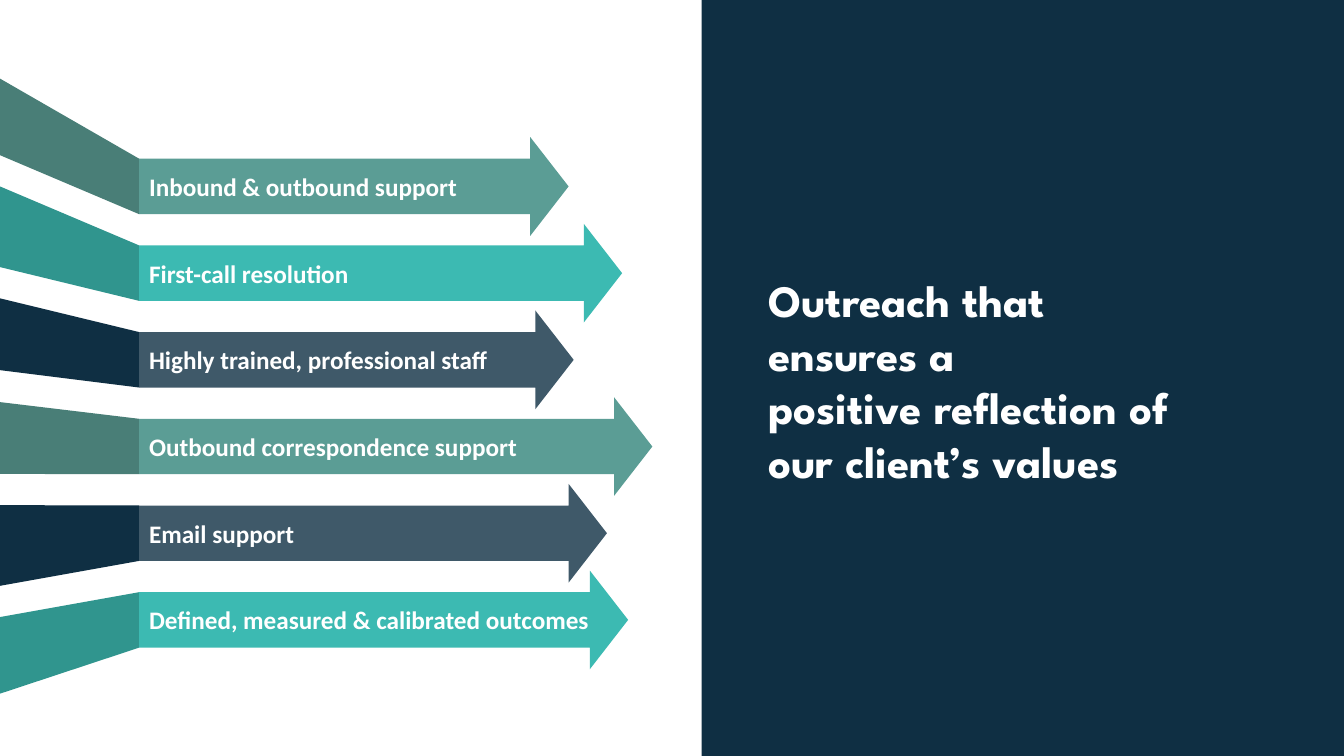
from pptx import Presentation
from pptx.dml.color import RGBColor
from pptx.enum.shapes import MSO_SHAPE as Shape
from pptx.enum.text import MSO_ANCHOR as Anchor, MSO_AUTO_SIZE as AutoSize, PP_ALIGN as Align
from pptx.util import Inches, Pt

NO_BREAK_SPACE = chr(160)
HEADLINE = NO_BREAK_SPACE.join(
    ["Outreach that ensures a positive", "reflection of our client’s values"])

# label, label width, arrow length, ribbon top and bottom at its far end, palette
SERVICES = [
    ("Inbound & outbound support", 3.78, 4.26, 0.40, 1.26, "sage"),
    ("First-call resolution", 4.42, 4.79, 1.57, 2.49, "teal"),
    ("Highly trained, professional staff", 3.87, 4.31, 2.80, 3.59, "navy"),
    ("Outbound correspondence support", 4.70, 5.09, 3.91, 4.70, "sage"),
    ("Email support", 4.10, 4.64, 5.01, 5.93, "navy"),
    ("Defined, measured & calibrated outcomes", 4.70, 4.85, 6.24, 7.10, "teal"),
]

COLORS = {
    "white": "FFFFFF",
    "navy_ribbon": "0F2F43", "navy_arrow": "3F5969",
    "sage_ribbon": "497E77", "sage_arrow": "5B9D95",
    "teal_ribbon": "30958E", "teal_arrow": "3CBAB2",
}

SLIDE_W, SLIDE_H = 13.33, 7.5
PANEL_X = 6.96
RIBBON_X, FOLD_X = -0.66, 1.38
FIRST_Y, ROW_STEP = 1.36, 0.86
ARROW_H, SHAFT_H, HEAD_L = 0.98, 0.55, 0.38
LABEL_H = 0.4


def paint(shape, color):
    shape.shadow.inherit = False
    shape.fill.solid()
    shape.fill.fore_color.rgb = RGBColor.from_string(COLORS[color])
    shape.line.fill.background()


def write(frame, text, font_name, size):
    """Put one left-aligned bold white run into a vertically centred frame."""
    frame.word_wrap = True
    frame.auto_size = AutoSize.NONE
    frame.vertical_anchor = Anchor.MIDDLE
    paragraph = frame.paragraphs[0]
    paragraph.alignment = Align.LEFT
    run = paragraph.add_run()
    run.text = text
    run.font.name = font_name
    run.font.size = Pt(size)
    run.font.bold = True
    run.font.color.rgb = RGBColor.from_string(COLORS["white"])


def add_headline(slide):
    title = slide.shapes.title
    title.left, title.top = Inches(7.52), Inches(2.64)
    title.width, title.height = Inches(4.52), Inches(2.26)
    write(title.text_frame, HEADLINE, "League Spartan", 32)

    panel = slide.shapes.add_shape(
        Shape.RECTANGLE, Inches(PANEL_X), 0, Inches(SLIDE_W - PANEL_X), Inches(SLIDE_H))
    paint(panel, "navy_ribbon")
    title.element.addprevious(panel.element)  # panel goes behind the headline


def add_service(slide, row, service):
    label, label_w, length, far_top, far_bottom, palette = service
    arrow_y = FIRST_Y + row * ROW_STEP
    middle = arrow_y + ARROW_H / 2
    shaft_top, shaft_bottom = middle - SHAFT_H / 2, middle + SHAFT_H / 2

    outline = slide.shapes.build_freeform(
        Inches(FOLD_X), Inches(shaft_bottom), scale=1.0)
    corners = [(RIBBON_X, far_bottom), (RIBBON_X, far_top), (FOLD_X, shaft_top)]
    outline.add_line_segments([(Inches(x), Inches(y)) for x, y in corners], close=True)
    paint(outline.convert_to_shape(), f"{palette}_ribbon")

    arrow = slide.shapes.add_shape(
        Shape.RIGHT_ARROW, Inches(FOLD_X), Inches(arrow_y), Inches(length), Inches(ARROW_H))
    arrow.adjustments[0] = SHAFT_H / ARROW_H
    arrow.adjustments[1] = HEAD_L / ARROW_H
    paint(arrow, f"{palette}_arrow")

    caption = slide.shapes.add_textbox(
        Inches(FOLD_X), Inches(middle - LABEL_H / 2), Inches(label_w), Inches(LABEL_H))
    write(caption.text_frame, label, "Calibri", 18)


def main():
    deck = Presentation()
    deck.slide_width, deck.slide_height = Inches(SLIDE_W), Inches(SLIDE_H)
    slide = deck.slides.add_slide(deck.slide_layouts.get_by_name("Title Only"))
    add_headline(slide)
    for row, service in enumerate(SERVICES):
        add_service(slide, row, service)
    deck.save("out.pptx")


if __name__ == "__main__":
    main()
